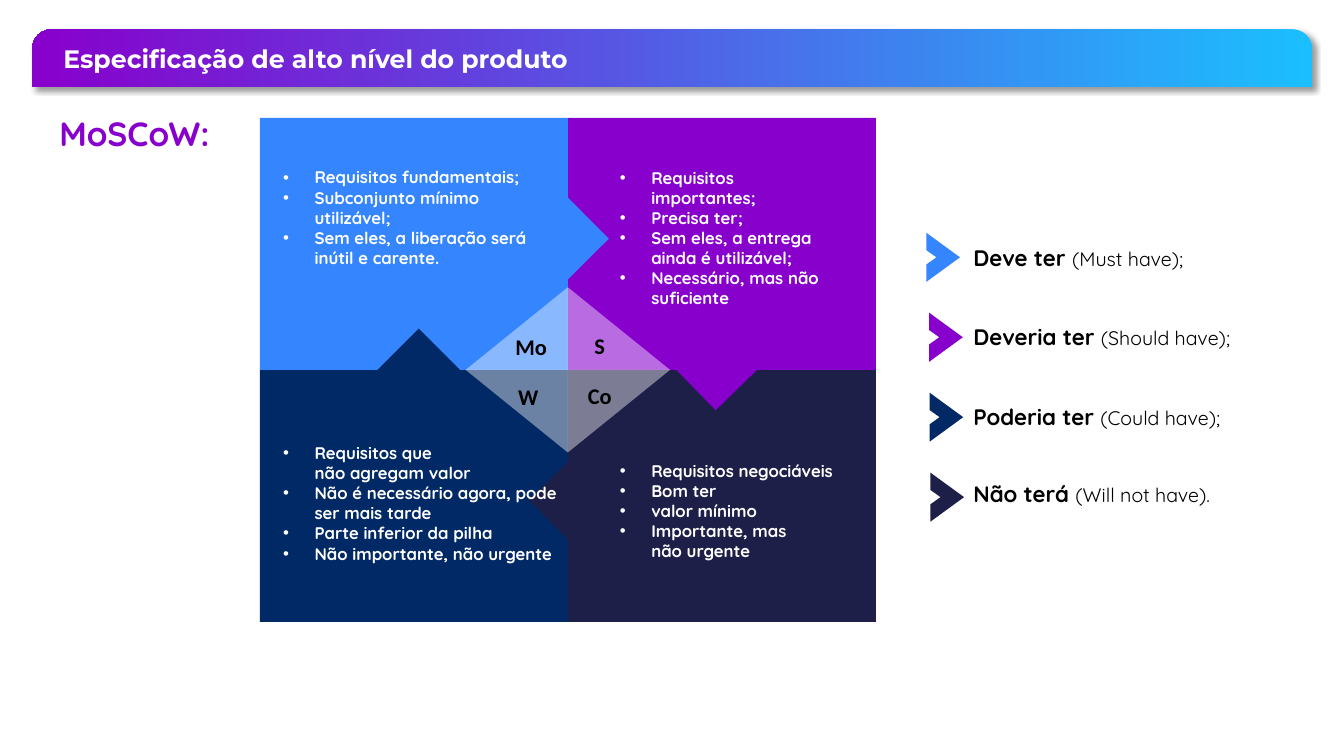
from lxml.etree import SubElement
from pptx import Presentation
from pptx.dml.color import RGBColor
from pptx.enum.shapes import MSO_SHAPE
from pptx.enum.text import MSO_ANCHOR, MSO_AUTO_SIZE, PP_ALIGN
from pptx.oxml.ns import qn
from pptx.util import Pt

HEX = {"blue": "3485FE", "purple": "8800CC", "navy": "012965", "ink": "1E1F48",
       "cyan": "1BBFFF", "white": "FFFFFF", "black": "000000"}
FRAME = {"word_wrap": True, "auto_size": MSO_AUTO_SIZE.SHAPE_TO_FIT_TEXT,
         "vertical_anchor": MSO_ANCHOR.TOP, "margin_left": Pt(7.2),
         "margin_right": Pt(7.2), "margin_top": Pt(3.6), "margin_bottom": Pt(3.6)}
HEAD = {"name": "Montserrat", "size": Pt(18), "bold": True}
NAME = {"name": "Quicksand", "size": Pt(24), "bold": True}
ITEM = {"name": "Quicksand", "size": Pt(12), "bold": True}
MARK = {"name": "Calibri", "size": Pt(16), "bold": True}
TERM = {"name": "Quicksand", "size": Pt(16), "bold": True}
NOTE = {"name": "Quicksand", "size": Pt(14), "bold": False}

# Per quadrant: colour, column, row, tab (centre from the middle, size, turn),
# text box, letters and their place, turn of the centre triangle, items
QUADS = [
    ("navy", 0, 1, (-110, 6.2, 55.4, 45.4, 135), (9.5, 228.3, 214.6, 94.3),
     "W", (166.5, 185.8), 180,
     ["Requisitos que\nnão agregam valor",
      "Não é necessário agora, pode ser mais tarde",
      "Parte inferior da pilha", "Não importante, não urgente"]),
    ("ink", 1, 1, (8, 89.7, 45.4, 55.4, 45.6), (250, 241.2, 171.4, 80),
     "Co", (217.6, 185.1), 90,
     ["Requisitos negociáveis", "Bom ter", "valor mínimo",
      "Importante, mas\nnão urgente"]),
    ("purple", 1, 0, (109.6, -6.8, 55.4, 45.4, 315.7), (250, 31.7, 171.4, 94.3),
     "S", (217.6, 149.8), 0,
     ["Requisitos importantes;", "Precisa ter;",
      "Sem eles, a entrega ainda é utilizável;",
      "Necessário, mas não suficiente"]),
    ("blue", 0, 0, (-6.4, -90.3, 45.4, 55.4, 225.2), (9.5, 31.7, 190.8, 80),
     "Mo", (168.6, 150.5), 270,
     ["Requisitos fundamentais;", "Subconjunto mínimo utilizável;",
      "Sem eles, a liberação será inútil e carente."]),
]

# Colour, arrow's left offset, text's top offset, term, note
TERMS = [("blue", 0, 4.3, "Deve ter ", "(Must have);"),
         ("purple", 2, 4.2, "Deveria ter ", "(Should have);"),
         ("navy", 2.3, 4, "Poderia ter ", "(Could have);"),
         ("ink", 2.9, 1.7, "Não terá ", "(Will not have).")]


def style(obj, values):
    for key, value in values.items():
        setattr(obj, key, value)


def tint(color, key):
    color.rgb = RGBColor.from_string(HEX[key])


def paint(shape, key):
    shape.shadow.inherit = False
    shape.line.fill.background()
    shape.fill.solid()
    tint(shape.fill.fore_color, key)


def ink(para, font, key):
    for run in para.runs:
        style(run.font, font)
        tint(run.font.color, key)


def label(slide, box, text, font, key, align=PP_ALIGN.LEFT):
    frame = slide.shapes.add_textbox(*map(Pt, box)).text_frame
    style(frame, FRAME)
    para = frame.paragraphs[0]
    para.text, para.alignment = text, align
    ink(para, font, key)
    return para


def wedge(slide, x, y, wide, high, turn, key):
    """Right triangle, centred on x, y."""
    shape = slide.shapes.add_shape(MSO_SHAPE.RIGHT_TRIANGLE, Pt(x - wide / 2),
                                   Pt(y - high / 2), Pt(wide), Pt(high))
    shape.rotation = turn
    paint(shape, key)
    return shape


def header(slide, box):
    left, top, wide, high = box
    title = slide.shapes.title
    bar = slide.shapes.add_shape(MSO_SHAPE.ROUND_2_SAME_RECTANGLE, *map(Pt, box))
    slide.shapes._spTree.insert(2, bar._element)  # behind the title
    bar.adjustments[0] = 0.338
    bar.line.fill.background()
    bar.fill.gradient()
    bar.fill.gradient_angle = 180
    for stop, key in zip(bar.fill.gradient_stops, ("cyan", "purple")):
        tint(stop.color, key)
    for stop, place in zip(bar.fill.gradient_stops, (0, 1)):
        stop.position = place
    # Soft shadow under the bar
    bar.shadow.inherit = False
    effects = bar._element.spPr.find(qn("a:effectLst"))
    shade = SubElement(effects, qn("a:outerShdw"), blurRad=str(Pt(4)),
                       dist=str(Pt(3)), dir="2700000", algn="tl", rotWithShape="0")
    color = SubElement(shade, qn("a:srgbClr"), val=HEX["black"])
    SubElement(color, qn("a:alpha"), val="40000")
    # Title text
    style(title, {"left": Pt(left + 15), "top": Pt(top + 6.5),
                  "width": Pt(407), "height": Pt(29)})
    style(title.text_frame, FRAME)
    para = title.text_frame.paragraphs[0]
    para.text, para.alignment = "Especificação de alto nível do produto", PP_ALIGN.JUSTIFY
    ink(para, HEAD, "white")


def bullets(slide, box, items):
    frame = slide.shapes.add_textbox(*map(Pt, box)).text_frame
    style(frame, FRAME)
    for pos, item in enumerate(items):
        para = frame.add_paragraph() if pos else frame.paragraphs[0]
        para.text = item
        props = para._p.get_or_add_pPr()
        props.set("marL", str(Pt(22.5)))
        props.set("indent", str(-Pt(22.5)))
        color = SubElement(props, qn("a:buClr"))
        SubElement(color, qn("a:srgbClr"), val=HEX["white"])
        SubElement(props, qn("a:buFont"), typeface="Arial")
        SubElement(props, qn("a:buChar"), char="•")
        ink(para, ITEM, "white")


def matrix(slide, box):
    left, top, wide, high = box
    half, rise = wide / 2, high / 2
    midx, midy = left + half, top + rise
    # Panels
    for key, col, row, *_ in QUADS:
        panel = slide.shapes.add_shape(MSO_SHAPE.RECTANGLE, Pt(left + col * half),
                                       Pt(top + row * rise), Pt(half), Pt(rise))
        paint(panel, key)
    # Tabs that point to the next panel
    for key, _, _, (x, y, *size), *_ in QUADS:
        wedge(slide, midx + x, midy + y, *size, key)
    # Lists
    for _, _, _, _, (x, y, *size), _, _, _, items in QUADS:
        bullets(slide, (left + x, top + y, *size), items)
    # Centre diamond
    for _, col, row, _, _, _, _, turn, _ in QUADS:
        size = (59, 73) if turn % 180 else (73, 59)
        part = wedge(slide, midx + (col - 0.5) * 73, midy + (row - 0.5) * 59,
                     *size, turn, "white")
        color = part._element.spPr.find(qn("a:solidFill"))[0]
        SubElement(color, qn("a:alpha"), val="42000")
    # Letters
    for _, _, _, _, _, text, (x, y), _, _ in QUADS:
        label(slide, (left + x, top + y, 50.4, 24.5), text, MARK, "black",
              PP_ALIGN.CENTER)


def legend(slide, box):
    left, top, wide, high = box
    step = high / len(TERMS)
    for pos, (key, shift, drop, term, note) in enumerate(TERMS):
        x, y = left + shift, top + pos * step
        # Arrowhead
        pen = slide.shapes.build_freeform(Pt(x + 24), Pt(y + 17.5), 1)
        pen.add_line_segments([(Pt(x + dx), Pt(y + dy)) for dx, dy in
                               ((0, 0), (0, 12.4), (7.2, 17.5), (0, 22.6), (0, 35))])
        paint(pen.convert_to_shape(), key)
        # Term with its English name
        para = label(slide, (left + 26.5, y + drop, wide - 26.5, 26.6), term, TERM,
                     "black", PP_ALIGN.JUSTIFY)
        run = para.add_run()
        run.text = note
        style(run.font, NOTE)
        tint(run.font.color, "black")


def main():
    deck = Presentation()
    deck.slide_width, deck.slide_height = Pt(960), Pt(540)
    slide = deck.slides.add_slide(deck.slide_layouts[5])
    header(slide, (23, 21, 914.4, 41))
    label(slide, (35.3, 77, 126.7, 36), "MoSCoW:", NAME, "purple")
    matrix(slide, (185.6, 84.2, 440, 360))
    legend(slide, (661.7, 166.3, 298.3, 228.4))
    deck.save("out.pptx")


if __name__ == "__main__":
    main()
